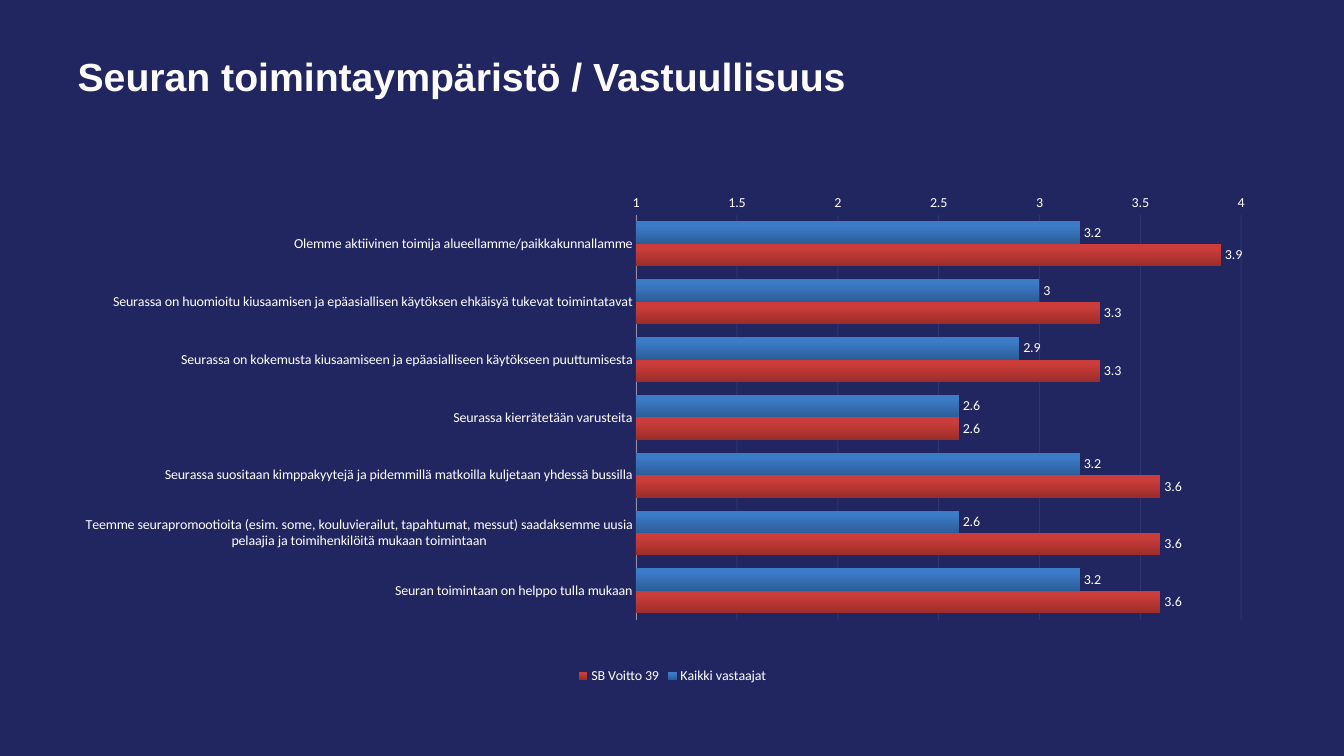
import pptx
import pptx.chart.data
import pptx.dml.color
import pptx.enum.chart
import pptx.enum.text
import pptx.oxml
import pptx.util

RGBColor = pptx.dml.color.RGBColor
Inches = pptx.util.Inches
Pt = pptx.util.Pt

NAVY = RGBColor(0x21, 0x25, 0x60)
TITLE_WHITE = RGBColor(0xFC, 0xFC, 0xFC)
WHITE = RGBColor(0xFF, 0xFF, 0xFF)
GRID_BLUE = RGBColor(0x4F, 0x81, 0xBD)
AXIS_GREY = RGBColor(0x90, 0x92, 0xB0)
BLUE_DARK = RGBColor(0x2C, 0x5D, 0x98)
BLUE_BRIGHT = RGBColor(0x3C, 0x7B, 0xC7)
RED_DARK = RGBColor(0x9B, 0x2D, 0x2A)
RED_BRIGHT = RGBColor(0xCB, 0x3D, 0x3A)

STATEMENTS = [
    "Olemme aktiivinen toimija alueellamme/paikkakunnallamme",
    "Seurassa on huomioitu kiusaamisen ja epäasiallisen käytöksen ehkäisyä tukevat toimintatavat",
    "Seurassa on kokemusta kiusaamiseen ja epäasialliseen käytökseen puuttumisesta",
    "Seurassa kierrätetään varusteita",
    "Seurassa suositaan kimppakyytejä ja pidemmillä matkoilla kuljetaan yhdessä bussilla",
    "Teemme seurapromootioita (esim. some, kouluvierailut, tapahtumat, messut) saadaksemme uusia "
    "pelaajia ja toimihenkilöitä mukaan toimintaan",
    "Seuran toimintaan on helppo tulla mukaan",
]
RATINGS = [
    ("Kaikki vastaajat", [3.2, 3, 2.9, 2.6, 3.2, 2.6, 3.2], BLUE_DARK, BLUE_BRIGHT),
    ("SB Voitto 39", [3.9, 3.3, 3.3, 2.6, 3.6, 3.6, 3.6], RED_DARK, RED_BRIGHT),
]
PLOT_AREA = {"x": 0.47, "y": 0.02, "w": 0.5, "h": 0.84}


class SlideBuilder:
    title_font = "Arial"
    chart_font = "Calibri"

    def __init__(self, deck):
        self.page = deck.slides.add_slide(deck.slide_layouts[5])
        self.page.background.fill.solid()
        self.page.background.fill.fore_color.rgb = NAVY

    def title(self, text, left, top, width, height):
        box = self.page.shapes.title
        box.left, box.top, box.width, box.height = map(Inches, (left, top, width, height))
        box.text_frame.vertical_anchor = pptx.enum.text.MSO_ANCHOR.MIDDLE
        para = box.text_frame.paragraphs[0]
        para.alignment = pptx.enum.text.PP_ALIGN.LEFT
        span = para.add_run()
        span.text = text
        span.font.name = self.title_font
        span.font.size = Pt(28)
        span.font.bold = True
        span.font.color.rgb = TITLE_WHITE

    def bar_chart(self, categories, ratings, left, top, width, height):
        data = pptx.chart.data.CategoryChartData()
        data.categories = categories
        for name, values, dark, bright in ratings:
            data.add_series(name, values)
        chart = self.page.shapes.add_chart(
            pptx.enum.chart.XL_CHART_TYPE.BAR_CLUSTERED,
            *map(Inches, (left, top, width, height)), data).chart
        chart.has_title = False
        chart.font.name = self.chart_font
        chart.font.size = Pt(10)
        chart.font.color.rgb = WHITE
        chart.has_legend = True
        chart.legend.position = pptx.enum.chart.XL_LEGEND_POSITION.BOTTOM
        chart.legend.include_in_layout = False
        self.bars(chart.plots[0], ratings)
        self.axes(chart)
        self.plot_layout(chart)

    def bars(self, plot, ratings):
        plot.gap_width = 58
        plot.overlap = 0
        plot.vary_by_categories = False
        plot.has_data_labels = True
        plot.data_labels.show_value = True
        plot.data_labels.position = pptx.enum.chart.XL_LABEL_POSITION.OUTSIDE_END
        for series, (name, values, dark, bright) in zip(plot.series, ratings):
            fill = series.format.fill
            fill.gradient()
            fill.gradient_angle = 90
            start, end = fill.gradient_stops
            start.color.rgb, end.color.rgb = dark, bright
            start.position, end.position = 0, 0.8

    def axes(self, chart):
        category, value = chart.category_axis, chart.value_axis
        category.reverse_order = True
        category.crosses = pptx.enum.chart.XL_AXIS_CROSSES.MAXIMUM
        category.format.line.color.rgb = AXIS_GREY
        category.format.line.width = Pt(0.75)
        value.minimum_scale, value.maximum_scale, value.major_unit = 1, 4, 0.5
        value.format.line.fill.background()
        value.tick_labels.number_format = "General"
        value.tick_labels.number_format_is_linked = False
        for axis in (category, value):
            axis.major_tick_mark = pptx.enum.chart.XL_TICK_MARK.NONE
            axis.minor_tick_mark = pptx.enum.chart.XL_TICK_MARK.NONE
        value.has_major_gridlines = True
        line = value.major_gridlines.format.line
        line.color.rgb = GRID_BLUE
        line.width = Pt(0.75)
        color = value.major_gridlines._xAx.find(
            ".//" + pptx.oxml.ns.qn("c:majorGridlines")).find(
            ".//" + pptx.oxml.ns.qn("a:srgbClr"))
        alpha = color.makeelement(pptx.oxml.ns.qn("a:alpha"), {"val": "20000"})
        color.append(alpha)

    def plot_layout(self, chart):
        qn = pptx.oxml.ns.qn
        area = chart._chartSpace.find(".//" + qn("c:plotArea"))
        layout = area.find(qn("c:layout"))
        if layout is None:
            layout = area.makeelement(qn("c:layout"), {})
            area.insert(0, layout)
        manual = layout.makeelement(qn("c:manualLayout"), {})
        layout.append(manual)
        settings = [("layoutTarget", "inner"), ("xMode", "edge"), ("yMode", "edge")]
        for tag, setting in settings + list(PLOT_AREA.items()):
            manual.append(manual.makeelement(qn("c:" + tag), {"val": str(setting)}))


def main():
    deck = pptx.Presentation()
    deck.slide_width, deck.slide_height = Inches(13.33), Inches(7.5)
    builder = SlideBuilder(deck)
    builder.title("Seuran toimintaympäristö / Vastuullisuus", 0.67, 0.36, 12, 0.79)
    builder.bar_chart(STATEMENTS, RATINGS, 0.67, 1.94, 12, 4.88)
    deck.save("out.pptx")


if __name__ == "__main__":
    main()
